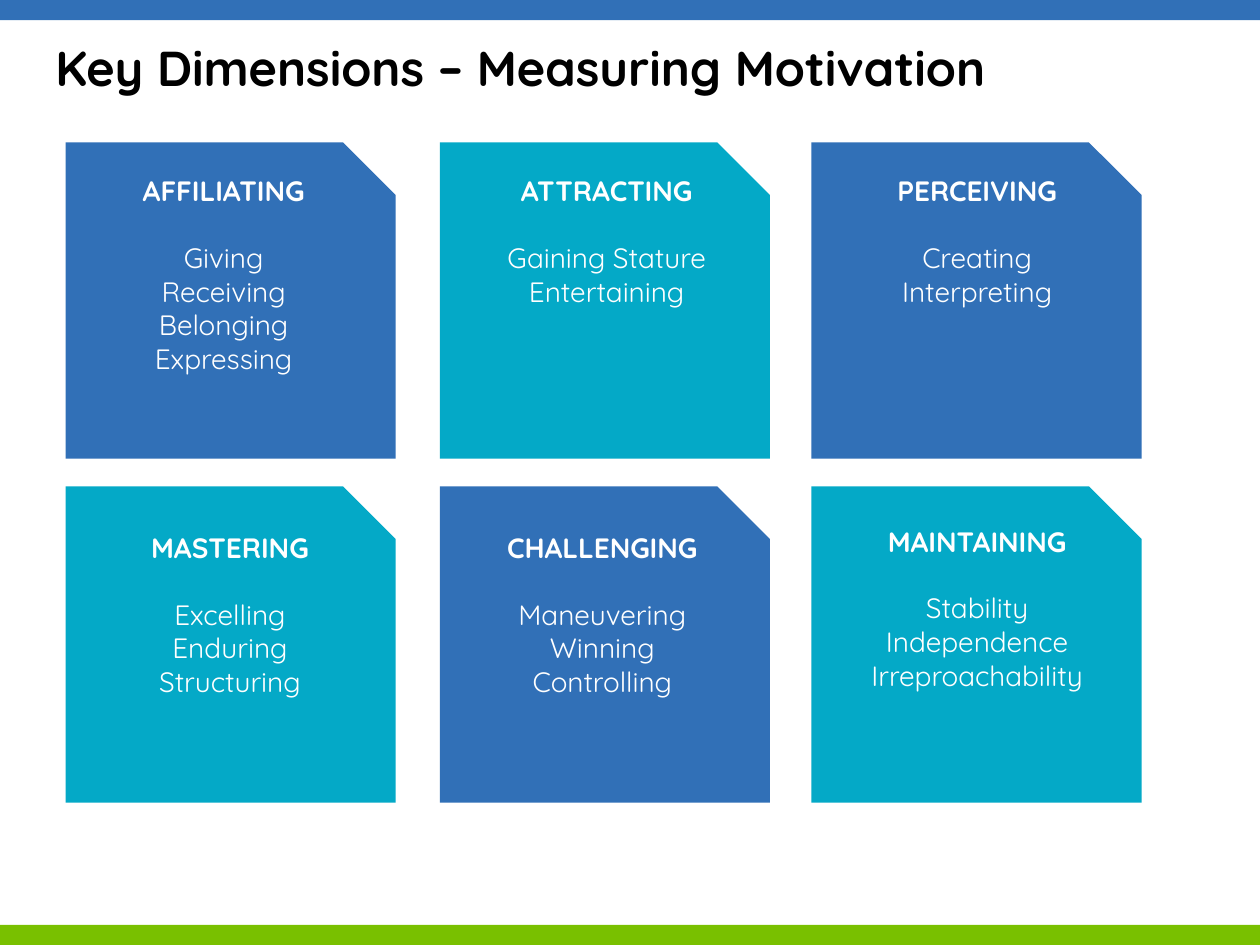
"""Build the slide of six motivation dimensions."""
from pptx import Presentation
from pptx.dml.color import RGBColor
from pptx.enum.shapes import MSO_SHAPE
from pptx.enum.text import MSO_ANCHOR, PP_ALIGN
from pptx.util import Inches, Pt

BLUE = RGBColor(0x31, 0x70, 0xB7)
TEAL = RGBColor(0x04, 0xA9, 0xC7)
GREEN = RGBColor(0x79, 0xC0, 0x00)
WHITE = RGBColor(0xFF, 0xFF, 0xFF)
BLACK = RGBColor(0x00, 0x00, 0x00)

CARD_LEFTS = [0.52, 3.49, 6.44]
CARD_TOPS = [1.13, 3.86]
TITLE_FORMAT = {"name": "Quicksand", "size": Pt(28), "bold": True}
HEADING_FORMAT = {"name": "Quicksand", "size": Pt(16), "bold": True}
ITEM_FORMAT = {"name": "Quicksand", "size": Pt(16), "bold": False}

DIMENSIONS = [
    ("AFFILIATING", ["Giving", "Receiving", "Belonging", "Expressing"], (0.52, 1.31, 2.51, 1.75)),
    ("ATTRACTING", ["Gaining Stature", "Entertaining"], (3.56, 1.31, 2.51, 1.21)),
    ("PERCEIVING", ["Creating", "Interpreting"], (6.5, 1.31, 2.51, 1.21)),
    ("MASTERING", ["Excelling", "Enduring", "Structuring"], (0.57, 4.14, 2.51, 1.48)),
    ("CHALLENGING", ["Maneuvering", "Winning", "Controlling"], (3.42, 4.14, 2.72, 1.48)),
    ("MAINTAINING", ["Stability", "Independence", "Irreproachability"], (6.39, 4.09, 2.73, 1.48)),
]

presentation = Presentation()
presentation.slide_width = Inches(10)
presentation.slide_height = Inches(7.5)
slide = presentation.slides.add_slide(presentation.slide_layouts[6])


def add_filled_shape(kind, bounds, color):
    shape = slide.shapes.add_shape(kind, *map(Inches, bounds))
    shape.shadow.inherit = False
    shape.fill.solid()
    shape.fill.fore_color.rgb = color
    shape.line.fill.background()


def add_text(bounds, margins, lines, color, **paragraph_format):
    text_frame = slide.shapes.add_textbox(*map(Inches, bounds)).text_frame
    text_frame.word_wrap = True
    text_frame.vertical_anchor = MSO_ANCHOR.TOP
    for side, margin in zip(("left", "top", "right", "bottom"), margins):
        setattr(text_frame, f"margin_{side}", Inches(margin))
    for index, (text, font_format, space_before) in enumerate(lines):
        paragraph = text_frame.add_paragraph() if index else text_frame.paragraphs[0]
        for name, value in paragraph_format.items():
            setattr(paragraph, name, value)
        if space_before:
            paragraph.space_before = Pt(space_before)
        run = paragraph.add_run()
        run.text = text
        for name, value in font_format.items():
            setattr(run.font, name, value)
        run.font.color.rgb = color


for top, color in ((0, BLUE), (7.34, GREEN)):
    add_filled_shape(MSO_SHAPE.RECTANGLE, (0, top, 10, 0.16), color)

add_text((0.44, 0.37, 9.01, 1.05), (0, 0, 0, 0),
         [("Key Dimensions – Measuring Motivation", TITLE_FORMAT, 0)],
         BLACK, line_spacing=0.85)

for index, (heading, items, text_bounds) in enumerate(DIMENSIONS):
    row, column = divmod(index, 3)
    color = TEAL if index % 2 else BLUE
    add_filled_shape(MSO_SHAPE.SNIP_1_RECTANGLE,
                     (CARD_LEFTS[column], CARD_TOPS[row], 2.62, 2.51), color)
    lines = [(heading, HEADING_FORMAT, 0)]
    lines += [(item, ITEM_FORMAT, 0 if position else 19)
              for position, item in enumerate(items)]
    add_text(text_bounds, (0.13, 0.07, 0.13, 0.07), lines, WHITE,
             alignment=PP_ALIGN.CENTER)

presentation.save("out.pptx")
